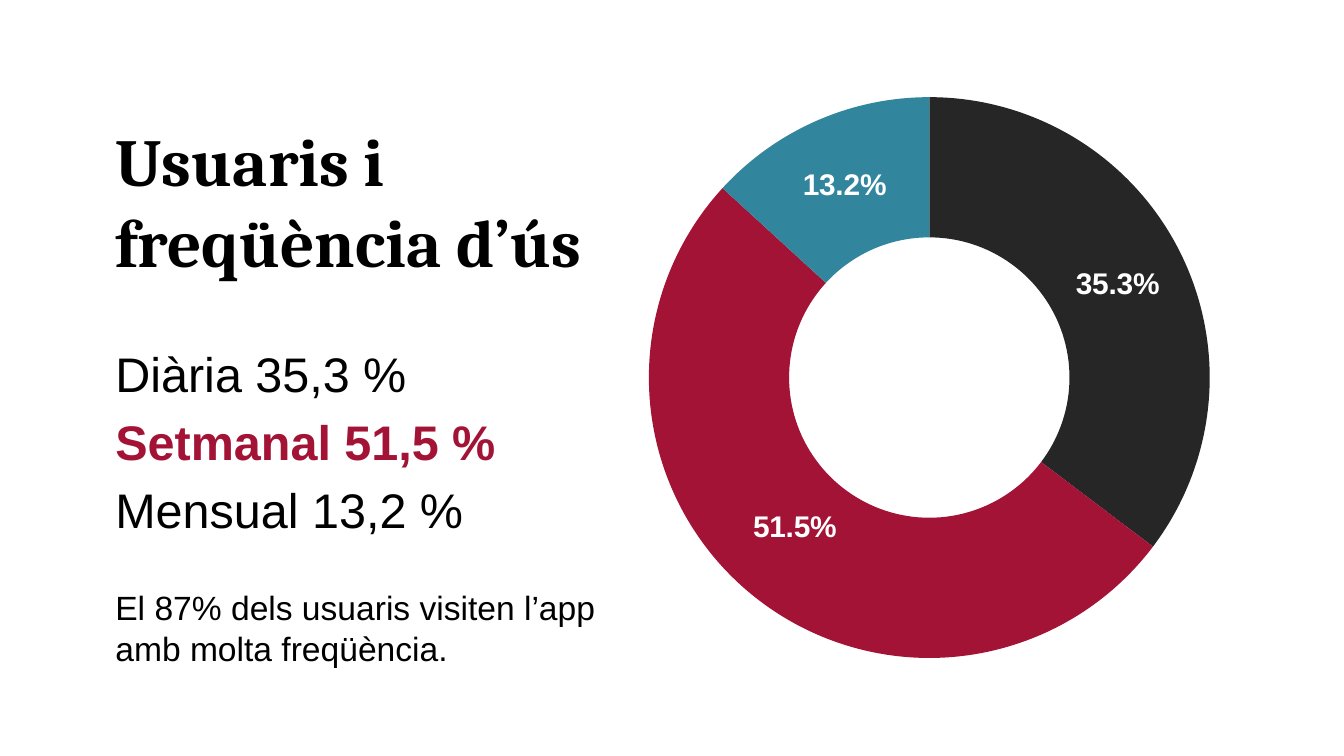
from copy import deepcopy

from lxml import etree
from pptx import Presentation
from pptx.chart.data import CategoryChartData
from pptx.dml.color import RGBColor
from pptx.enum.chart import XL_CHART_TYPE
from pptx.oxml import parse_xml
from pptx.oxml.ns import nsdecls, qn
from pptx.util import Inches, Pt

BLACK = RGBColor(0x00, 0x00, 0x00)
WHITE = RGBColor(0xFF, 0xFF, 0xFF)
CHARCOAL = RGBColor(0x26, 0x26, 0x26)
CRIMSON = RGBColor(0xA3, 0x13, 0x36)
TEAL = RGBColor(0x31, 0x85, 0x9C)

presentation = Presentation()
presentation.slide_width = Inches(10)
presentation.slide_height = Inches(10) * 9 // 16
slide = presentation.slides.add_slide(presentation.slide_layouts[6])


def add_text(top, width, height, lines, font_name, size):
    shape = slide.shapes.add_textbox(Inches(0.76), Inches(top), Inches(width), Inches(height))
    frame = shape.text_frame
    frame.word_wrap = True
    for index, (text, color, bold) in enumerate(lines):
        paragraph = frame.add_paragraph() if index else frame.paragraphs[0]
        paragraph.space_before = Pt(size * 0.2 if index else 0)
        run = paragraph.add_run()
        run.text = text
        run.font.name = font_name
        run.font.size = Pt(size)
        run.font.bold = bold
        run.font.color.rgb = color


def make_layout(settings):
    layout = parse_xml(f"<c:layout {nsdecls('c')}><c:manualLayout/></c:layout>")
    for name, value in settings.items():
        etree.SubElement(layout[0], qn(f"c:{name}")).set("val", value)
    return layout


frequencies = [
    ("Diària 35,3 %", BLACK, False),
    ("Setmanal 51,5 %", CRIMSON, True),
    ("Mensual 13,2 %", BLACK, False),
]
title = [("Usuaris i freqüència d’ús", BLACK, True)]
summary = [("El 87% dels usuaris visiten l’app amb molta freqüència.", BLACK, False)]

add_text(2.51, 4.46, 2.26, frequencies, "Arial", 26)
add_text(0.84, 4.35, 2.25, title, "Cambria", 36)

chart_data = CategoryChartData()
chart_data.categories = ["1", "2", "3"]
chart_data.add_series("Series 1", (35.3, 51.5, 13.2))
chart = slide.shapes.add_chart(
    XL_CHART_TYPE.DOUGHNUT, Inches(3.83), Inches(0.59), Inches(6.17), Inches(4.44), chart_data
).chart
chart.has_legend = False
chart.has_title = False
chart.font.name = "Calibri"
chart.font.size = Pt(18)
chart.font.color.rgb = BLACK

plot = chart.plots[0]
plot.vary_by_categories = True
for index, color in enumerate((CHARCOAL, CRIMSON, TEAL)):
    point = plot.series[0].points[index]
    point.format.fill.solid()
    point.format.fill.fore_color.rgb = color
    point.format.line.fill.background()

labels = plot.series[0].data_labels
labels.show_value = False
labels.show_percentage = True
labels.number_format = "0.0%"
labels.number_format_is_linked = False
labels.font.name = "Arial"
labels.font.size = Pt(16)
labels.font.bold = True
labels.font.color.rgb = WHITE

plot_area = chart.element.find(".//" + qn("c:plotArea"))
series_labels = plot_area.find(".//" + qn("c:ser")).find(qn("c:dLbls"))
weekly_label = parse_xml(f'<c:dLbl {nsdecls("c")}><c:idx val="1"/></c:dLbl>')
weekly_label.append(make_layout({"x": "0", "y": "-0.02"}))
for child in series_labels:
    if child.tag != qn("c:showLeaderLines"):
        weekly_label.append(deepcopy(child))
series_labels.insert(0, weekly_label)

for layout in plot_area.findall(qn("c:layout")):
    plot_area.remove(layout)
plot_area.insert(0, make_layout({
    "layoutTarget": "inner", "xMode": "edge", "yMode": "edge",
    "x": "0.16", "y": "0.03", "w": "0.68", "h": "0.94",
}))
plot_area.find(".//" + qn("c:holeSize")).set("val", "50")

add_text(4.32, 3.99, 0.73, summary, "Arial", 18)

presentation.save("out.pptx")
